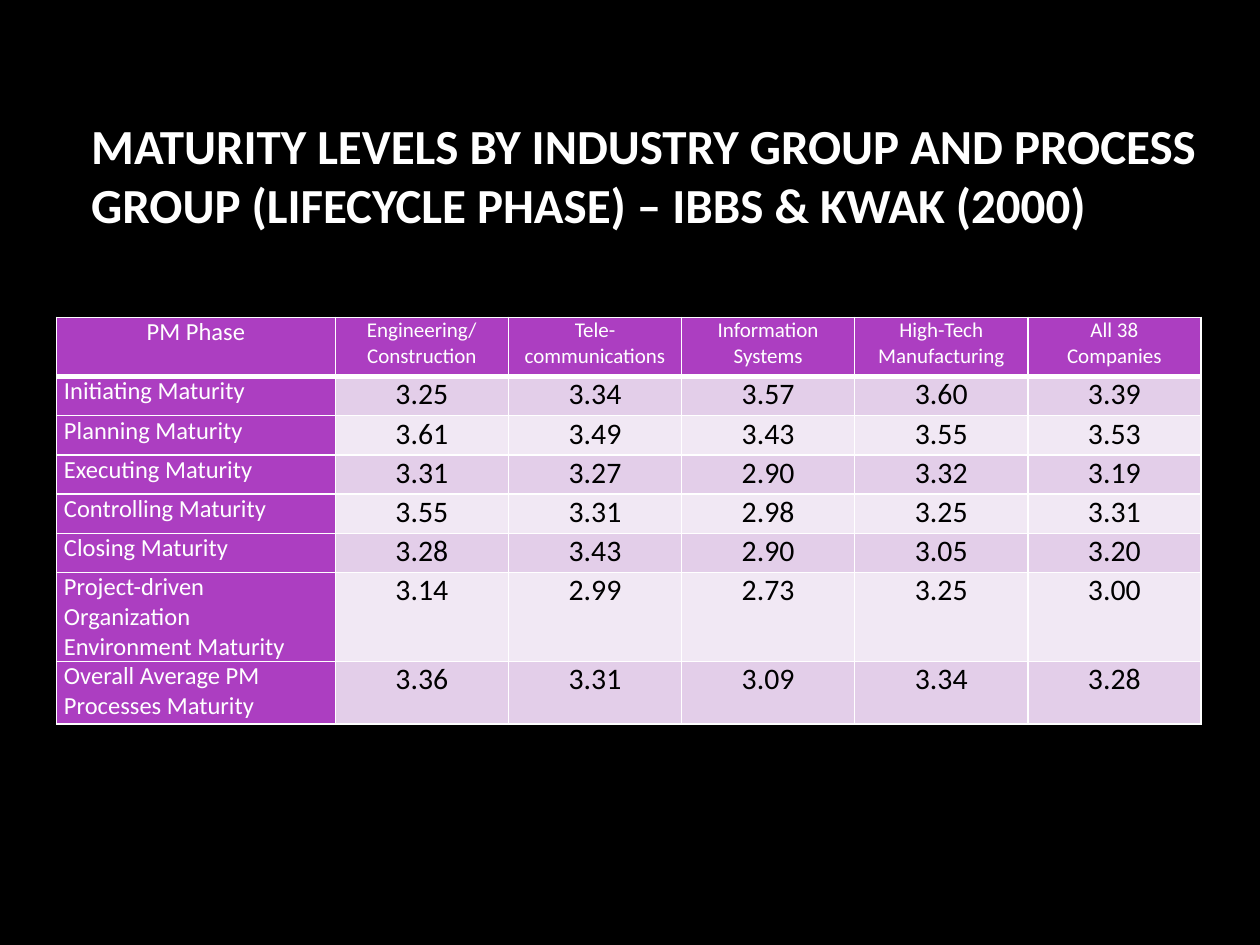
from dataclasses import dataclass

from lxml.etree import SubElement
from pptx import Presentation
from pptx.dml.color import RGBColor as Rgb
from pptx.enum.text import MSO_ANCHOR as Anchor, PP_ALIGN as Align
from pptx.oxml.ns import qn
from pptx.util import Cm, Pt


@dataclass(frozen=True)
class Theme:
    font: str = "Calibri"
    back: str = "000000"
    light: str = "FFFFFF"
    dark: str = "000000"
    head: str = "AC3EC1"
    bands: tuple = ("E3CEE9", "F1E8F4")
    title: int = 28
    label: int = 14
    group: int = 12
    value: int = 17
    thin: int = 1
    thick: int = 3


HEADS = ["PM Phase", "Engineering/\nConstruction", "Tele-\ncommunications",
         "Information\nSystems", "High-Tech\nManufacturing", "All 38\nCompanies"]
ROWS = [
    ("Initiating Maturity", 3.25, 3.34, 3.57, 3.60, 3.39),
    ("Planning Maturity", 3.61, 3.49, 3.43, 3.55, 3.53),
    ("Executing Maturity", 3.31, 3.27, 2.90, 3.32, 3.19),
    ("Controlling Maturity", 3.55, 3.31, 2.98, 3.25, 3.31),
    ("Closing Maturity", 3.28, 3.43, 2.90, 3.05, 3.20),
    ("Project-driven\nOrganization\nEnvironment Maturity", 3.14, 2.99, 2.73, 3.25, 3.00),
    ("Overall Average PM Processes Maturity", 3.36, 3.31, 3.09, 3.34, 3.28),
]
WIDTHS = [5.62] + [3.49] * 5
HEIGHTS = [1.19] + [0.79] * 5 + [1.79, 1.26]


def write(frame, text, *, font, size, color, bold=False, align=Align.LEFT):
    for i, line in enumerate(text.split("\n")):
        para = frame.paragraphs[0] if i == 0 else frame.add_paragraph()
        para.alignment = align
        run = para.add_run()
        run.text = line
        run.font.name = font
        run.font.size = Pt(size)
        run.font.bold = bold
        run.font.color.rgb = Rgb.from_string(color)


class Deck:
    def __init__(self, theme):
        self.theme = theme
        self.file = Presentation()
        self.file.slide_width, self.file.slide_height = Cm(25.4), Cm(19.05)
        self.slide = self.file.slides.add_slide(self.file.slide_layouts[6])
        fill = self.slide.background.fill
        fill.solid()
        fill.fore_color.rgb = Rgb.from_string(theme.back)

    def title(self, text, left, top, width, height):
        box = self.slide.shapes.add_textbox(Cm(left), Cm(top), Cm(width), Cm(height))
        frame = box.text_frame
        frame.word_wrap = True
        frame.vertical_anchor = Anchor.MIDDLE
        write(frame, text, font=self.theme.font, size=self.theme.title,
              color=self.theme.light, bold=True)

    def border(self, cell, base):
        props = cell._tc.get_or_add_tcPr()
        for side in "LRTB":
            size = base if side == "B" else self.theme.thin
            line = SubElement(props, qn(f"a:ln{side}"), w=str(Pt(size)))
            SubElement(SubElement(line, qn("a:solidFill")), qn("a:srgbClr"),
                       val=self.theme.light)

    def cell(self, cell, text, fill, base, **style):
        cell.margin_left = cell.margin_right = Cm(0.15)
        cell.margin_top = cell.margin_bottom = 0
        self.border(cell, base)
        cell.fill.solid()
        cell.fill.fore_color.rgb = Rgb.from_string(fill)
        write(cell.text_frame, text, font=self.theme.font, **style)

    def table(self, heads, rows, left, top, widths, heights):
        look = self.theme
        grid = self.slide.shapes.add_table(
            len(heights), len(widths), Cm(left), Cm(top),
            Cm(sum(widths)), Cm(sum(heights))).table
        for col, width in zip(grid.columns, widths):
            col.width = Cm(width)
        for row, height in zip(grid.rows, heights):
            row.height = Cm(height)
        for c, text in enumerate(heads):
            self.cell(grid.cell(0, c), text, look.head, look.thick,
                      size=look.group if c else look.label,
                      color=look.light, align=Align.CENTER)
        for r, (name, *values) in enumerate(rows, 1):
            self.cell(grid.cell(r, 0), name, look.head, look.thin,
                      size=look.label, color=look.light)
            band = look.bands[(r - 1) % 2]
            for c, value in enumerate(values, 1):
                self.cell(grid.cell(r, c), f"{value:.2f}", band, look.thin,
                          size=look.value, color=look.dark, align=Align.CENTER)


def main():
    deck = Deck(Theme())
    deck.title("MATURITY LEVELS BY INDUSTRY GROUP AND PROCESS GROUP "
               "(LIFECYCLE PHASE) – IBBS & KWAK (2000)", 1.59, 2, 23.81, 3.02)
    deck.table(HEADS, ROWS, 1.14, 6.4, WIDTHS, HEIGHTS)
    deck.file.save("out.pptx")


if __name__ == "__main__":
    main()
